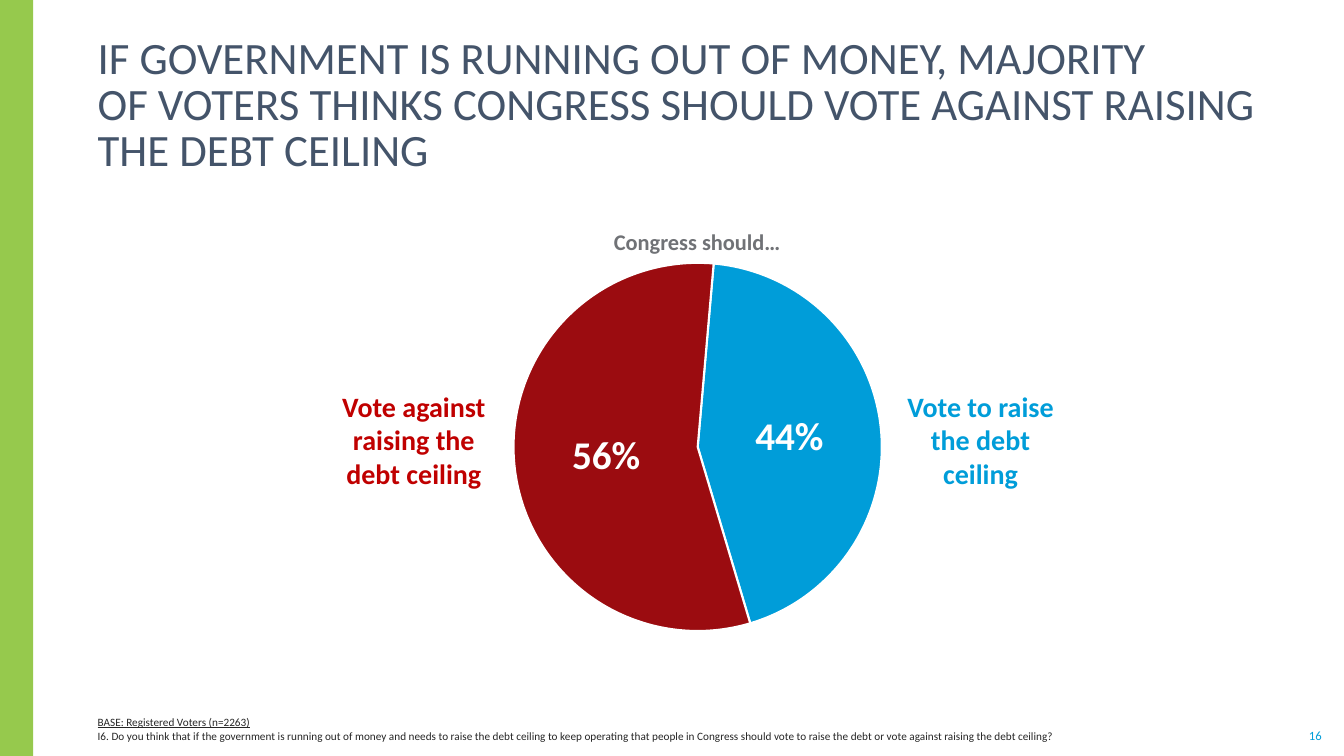
from pptx import Presentation
from pptx.chart.data import CategoryChartData as Data
from pptx.dml.color import RGBColor
from pptx.enum.chart import XL_CHART_TYPE as Kind, XL_LABEL_POSITION as Pos
from pptx.enum.shapes import MSO_SHAPE as Form
from pptx.enum.text import MSO_ANCHOR as Anchor, PP_ALIGN as Align
from pptx.oxml import parse_xml
from pptx.oxml.ns import nsdecls
from pptx.util import Inches, Pt

WHITE = RGBColor(0xFF, 0xFF, 0xFF)
GREEN = RGBColor(0x96, 0xC9, 0x4D)
SLATE = RGBColor(0x44, 0x54, 0x6A)
INK = RGBColor(0x26, 0x26, 0x26)
GRAY = RGBColor(0x70, 0x72, 0x76)
DARK = RGBColor(0x5F, 0x5F, 0x5F)
BLUE = RGBColor(0x00, 0x9D, 0xD9)
RED = RGBColor(0xC0, 0x00, 0x00)
MAROON = RGBColor(0x9B, 0x0C, 0x10)
FONT = "Calibri"

deck = Presentation()
deck.slide_width, deck.slide_height = Inches(13.33), Inches(7.5)
slide = deck.slides.add_slide(deck.slide_layouts[6])


def add_box(left, top, width, height, anchor=Anchor.TOP, side=0.1, edge=0.05):
    box = slide.shapes.add_textbox(
        Inches(left), Inches(top), Inches(width), Inches(height))
    frame = box.text_frame
    frame.word_wrap = True
    frame.vertical_anchor = anchor
    frame.margin_left = frame.margin_right = Inches(side)
    frame.margin_top = frame.margin_bottom = Inches(edge)
    return frame


def add_run(para, text, size, color, bold=False, under=False):
    run = para.add_run()
    run.text = text
    font = run.font
    font.name, font.size, font.bold = FONT, Pt(size), bold
    font.underline = under
    font.color.rgb = color


bar = slide.shapes.add_shape(
    Form.RECTANGLE, 0, 0, Inches(0.33), deck.slide_height)
bar.shadow.inherit = False
bar.fill.solid()
bar.fill.fore_color.rgb = GREEN
bar.line.fill.background()

number = add_box(12.97, 7.22, 0.15, 0.15, Anchor.MIDDLE, 0, 0)
number.word_wrap = False
number.paragraphs[0].alignment = Align.CENTER
add_run(number.paragraphs[0], "16", 9, BLUE)

title = add_box(0.87, 1.12, 11.9, 0.62, Anchor.BOTTOM, edge=0).paragraphs[0]
title.line_spacing = 0.85
add_run(title, "IF GOVERNMENT IS RUNNING OUT OF MONEY, MAJORITY", 32, SLATE)
title.add_line_break()
add_run(title, "OF VOTERS THINKS CONGRESS SHOULD VOTE AGAINST RAISING "
        "THE DEBT CEILING", 32, SLATE)

notes = add_box(0.87, 6.97, 11.91, 0.4, Anchor.BOTTOM, edge=0)
add_run(notes.paragraphs[0], "BASE: Registered Voters (n=2263)", 8, INK,
        under=True)
ask = notes.add_paragraph()
ask.space_before = Pt(0.6)
add_run(ask, "I6. Do you think that if the government is running out of money "
        "and needs to raise the debt ceiling to keep operating that people in "
        "Congress should vote to raise the debt or vote against raising the "
        "debt ceiling?", 8, INK)

data = Data(number_format="0%")
data.categories = ["1", "2"]
data.add_series("Series 1", (0.44, 0.56))
chart = slide.shapes.add_chart(
    Kind.PIE, Inches(4.11), Inches(2.47), Inches(5.62), Inches(3.93),
    data).chart
chart.has_legend = False
chart.has_title = False
chart.font.name, chart.font.size = FONT, Pt(10)
chart.font.color.rgb = DARK

plot = chart.plots[0]
plot.vary_by_categories = True
votes = plot.series[0]
for index, color in enumerate((BLUE, MAROON)):
    slice = votes.points[index].format
    slice.fill.solid()
    slice.fill.fore_color.rgb = color
    slice.line.color.rgb = WHITE
    slice.line.width = Pt(1.5)

labels = votes.data_labels
labels.show_value = True
labels.number_format, labels.number_format_is_linked = "0%", False
labels.position = Pos.CENTER
labels.font.name, labels.font.size, labels.font.bold = FONT, Pt(28), True
labels.font.color.rgb = WHITE

root = chart._chartSpace
pie = root.xpath(".//c:pieChart")[0]
for old in pie.xpath("c:firstSliceAng"):
    pie.remove(old)
pie.append(parse_xml(f'<c:firstSliceAng {nsdecls("c")} val="5"/>'))
area = root.xpath(".//c:plotArea")[0]
for old in area.xpath("c:layout"):
    area.remove(old)
area.insert(0, parse_xml(
    f'<c:layout {nsdecls("c")}><c:manualLayout>'
    '<c:layoutTarget val="inner"/><c:xMode val="edge"/><c:yMode val="edge"/>'
    '<c:x val="0.175"/><c:y val="0.035"/><c:w val="0.65"/><c:h val="0.93"/>'
    '</c:manualLayout></c:layout>'))

for left, top, width, height, text, size, color in (
    (3.19, 3.81, 1.83, 1.11, "Vote against raising the debt ceiling", 20, RED),
    (4.73, 2.21, 4.37, 0.37, "Congress should…", 16, GRAY),
    (8.74, 3.81, 1.97, 1.11, "Vote to raise the debt ceiling", 20, BLUE),
):
    para = add_box(left, top, width, height).paragraphs[0]
    para.alignment = Align.CENTER
    add_run(para, text, size, color, bold=True)

deck.save("out.pptx")
